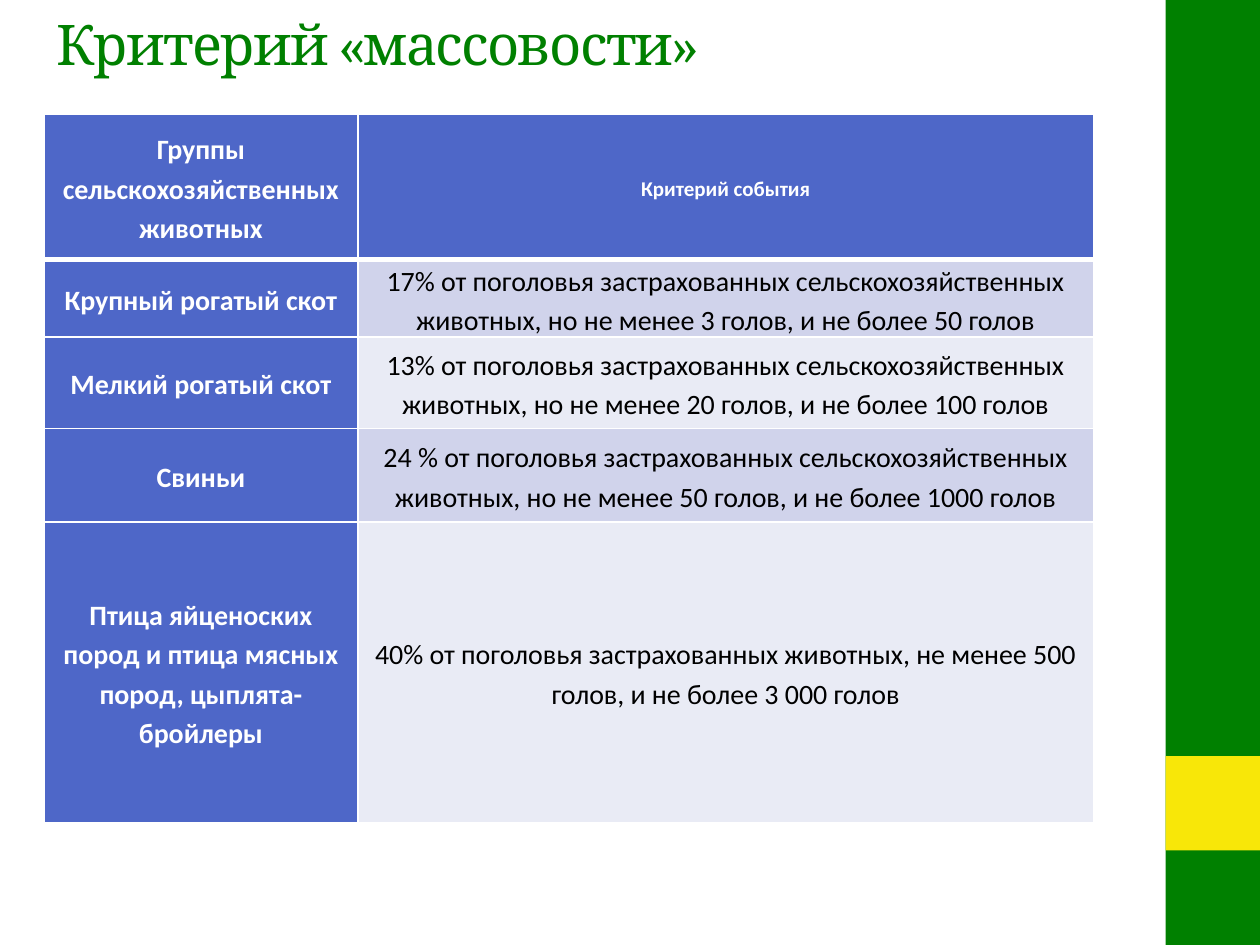
from dataclasses import dataclass

from lxml import etree
from pptx import Presentation
from pptx.dml.color import RGBColor
from pptx.enum.shapes import MSO_SHAPE
from pptx.enum.text import MSO_ANCHOR, PP_ALIGN
from pptx.oxml.ns import qn
from pptx.util import Inches, Pt

RECTANGLE = MSO_SHAPE.RECTANGLE
MIDDLE = MSO_ANCHOR.MIDDLE
CENTER = PP_ALIGN.CENTER

# Content
TITLE = "Критерий «массовости»"
ROWS = [
    ("Группы\nсельскохозяйственных животных", "Критерий события"),
    ("Крупный рогатый скот",
     "17% от поголовья застрахованных сельскохозяйственных животных, "
     "но не менее 3 голов, и не более 50 голов"),
    ("Мелкий рогатый скот",
     "13% от поголовья застрахованных сельскохозяйственных животных, "
     "но не менее 20 голов, и не более 100 голов"),
    ("Свиньи",
     "24 % от поголовья застрахованных сельскохозяйственных животных, "
     "но не менее 50 голов, и не более 1000 голов"),
    ("Птица яйценоских пород и птица мясных пород, цыплята-бройлеры",
     "40% от поголовья застрахованных животных, "
     "не менее 500 голов, и не более 3 000 голов"),
]

# Layout in inches
SLIDE_WIDTH, SLIDE_HEIGHT = 10, 7.5
BAND_WIDTH = 0.75
ACCENT_TOP = 6
LEFT = 0.35
TITLE_HEIGHT = 0.68
TABLE_TOP = 0.91
COLUMN_WIDTHS = (2.49, 5.84)
ROW_HEIGHTS = (1.15, 0.58, 0.73, 0.74, 2.39)
CONTENT_WIDTH = sum(COLUMN_WIDTHS)


@dataclass(frozen=True)
class Theme:
    green: str = "008000"
    yellow: str = "F8E708"
    heading: str = "4E67C8"
    stripes: tuple = ("E9EBF5", "D0D3EB")
    light: str = "FFFFFF"
    dark: str = "000000"
    title_font: str = "Cambria"
    body_font: str = "Calibri"
    title_size: int = 32
    body_size: int = 16
    small_size: int = 12
    thin_line: int = 1
    thick_line: int = 3


THEME = Theme()


def color(value):
    return RGBColor.from_string(value)


def add_band(slide, top, height, fill):
    shape = slide.shapes.add_shape(
        RECTANGLE, Inches(SLIDE_WIDTH - BAND_WIDTH), Inches(top),
        Inches(BAND_WIDTH), Inches(height))
    shape.shadow.inherit = False
    shape.fill.solid()
    shape.fill.fore_color.rgb = color(fill)
    shape.line.fill.background()


def add_title(slide):
    box = slide.shapes.add_textbox(
        Inches(LEFT), Inches(0), Inches(CONTENT_WIDTH), Inches(TITLE_HEIGHT))
    frame = box.text_frame
    frame.word_wrap = True
    frame.vertical_anchor = MIDDLE
    paragraph = frame.paragraphs[0]
    run = paragraph.add_run()
    run.text = TITLE
    style_font(paragraph.font, THEME.title_font, THEME.title_size, THEME.green)
    run.font._element.set("spc", "-100")  # tighten letters by one point


def style_font(font, name, size, value, bold=False):
    font.name = name
    font.size = Pt(size)
    font.bold = bold
    font.color.rgb = color(value)


def set_borders(cell, row):
    """White cell edges, thick between the header and the body."""
    widths = {
        "a:lnL": THEME.thin_line,
        "a:lnR": THEME.thin_line,
        "a:lnT": THEME.thick_line if row == 1 else THEME.thin_line,
        "a:lnB": THEME.thick_line if row == 0 else THEME.thin_line,
    }
    properties = cell._tc.get_or_add_tcPr()
    for position, (tag, width) in enumerate(widths.items()):
        line = etree.Element(qn(tag), w=str(Pt(width)))
        fill = etree.SubElement(line, qn("a:solidFill"))
        etree.SubElement(fill, qn("a:srgbClr"), val=THEME.light)
        properties.insert(position, line)


def fill_cell(cell, text, row, column):
    is_heading = row == 0 or column == 0
    is_small = row == 0 and column == 1
    cell.fill.solid()
    cell.fill.fore_color.rgb = color(
        THEME.heading if is_heading else THEME.stripes[row % 2])
    cell.vertical_anchor = MIDDLE
    cell.margin_left = cell.margin_right = Inches(0.05)
    cell.margin_top = cell.margin_bottom = 0
    cell.text = text
    for paragraph in cell.text_frame.paragraphs:
        paragraph.alignment = CENTER
        paragraph.line_spacing = 1.15
        if is_small:
            paragraph.space_after = Pt(3)
        style_font(paragraph.font, THEME.body_font,
                   THEME.small_size if is_small else THEME.body_size,
                   THEME.light if is_heading else THEME.dark, is_heading)
    set_borders(cell, row)


def add_criteria_table(slide):
    table = slide.shapes.add_table(
        len(ROWS), len(COLUMN_WIDTHS), Inches(LEFT), Inches(TABLE_TOP),
        Inches(CONTENT_WIDTH), Inches(sum(ROW_HEIGHTS))).table
    for column, width in zip(table.columns, COLUMN_WIDTHS):
        column.width = Inches(width)
    for row, height in zip(table.rows, ROW_HEIGHTS):
        row.height = Inches(height)
    for row, texts in enumerate(ROWS):
        for column, text in enumerate(texts):
            fill_cell(table.cell(row, column), text, row, column)


def main():
    presentation = Presentation()
    presentation.slide_width = Inches(SLIDE_WIDTH)
    presentation.slide_height = Inches(SLIDE_HEIGHT)
    slide = presentation.slides.add_slide(presentation.slide_layouts[6])

    # Side band with its accent square
    add_band(slide, 0, SLIDE_HEIGHT, THEME.green)
    add_band(slide, ACCENT_TOP, BAND_WIDTH, THEME.yellow)

    # Title and table
    add_title(slide)
    add_criteria_table(slide)
    presentation.save("out.pptx")


if __name__ == "__main__":
    main()
